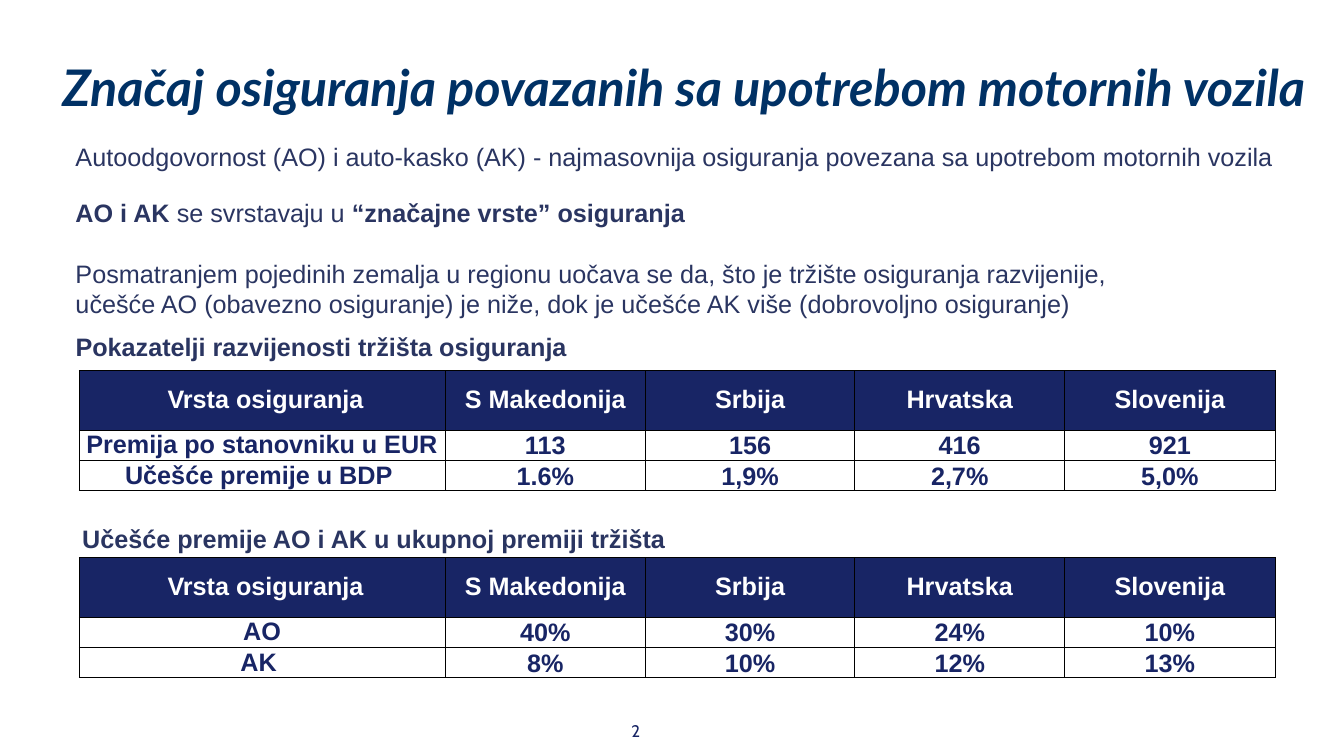
from lxml import etree
from pptx import Presentation
from pptx.dml.color import RGBColor
from pptx.enum.text import MSO_ANCHOR as Anchor, MSO_AUTO_SIZE as AutoSize, PP_ALIGN as Align
from pptx.oxml import parse_xml
from pptx.util import Inches, Pt

COLORS = {"navy": "182565", "title": "003165", "body": "2A3561", "white": "FFFFFF", "border": "000000"}
NAMESPACE = "http://schemas.openxmlformats.org/drawingml/2006/main"

presentation = Presentation()
presentation.slide_width = Inches(26.67)
presentation.slide_height = Inches(15)
slide = presentation.slides.add_slide(presentation.slide_layouts[6])


def write(paragraph, text, size=36, font="Arial", color="body", bold=False, italic=False, align=Align.JUSTIFY):
    paragraph.alignment = align
    run = paragraph.add_run()
    run.text = text
    run.font.size = Pt(size)
    run.font.name = font
    run.font.bold = bold
    run.font.italic = italic
    run.font.color.rgb = RGBColor.from_string(COLORS[color])


def add_box(left, top, width, height, inset=None, wrap=True, anchor=Anchor.TOP):
    shape = slide.shapes.add_textbox(Inches(left), Inches(top), Inches(width), Inches(height))
    frame = shape.text_frame
    frame.word_wrap = wrap
    frame.auto_size = AutoSize.SHAPE_TO_FIT_TEXT
    frame.vertical_anchor = anchor
    if inset is not None:
        frame.margin_left = frame.margin_right = frame.margin_top = frame.margin_bottom = Inches(inset)
    return frame


number = add_box(12.36, 14.23, 0.51, 0.52, inset=0.06, wrap=False)
write(number.paragraphs[0], "2", size=24, font="Cabin", color="navy", align=Align.CENTER)

title = add_box(1.18, 0.82, 24.92, 2.92, inset=0.06).paragraphs[0]
title.line_spacing = 1.2
write(title, "Značaj osiguranja povazanih sa upotrebom motornih vozila",
      size=72, font="Lato", color="title", bold=True, italic=True, align=Align.LEFT)

intro = add_box(1.4, 2.75, 24.07, 0.71)
write(intro.paragraphs[0], "Autoodgovornost (AO) i auto-kasko (AK) - najmasovnija osiguranja "
      "povezana sa upotrebom motornih vozila")

explanation = add_box(1.4, 3.87, 24.07, 2.52)
paragraph = explanation.paragraphs[0]
write(paragraph, "AO i AK ", bold=True)
write(paragraph, "se svrstavaju u ")
write(paragraph, "“značajne vrste” osiguranja", bold=True)
paragraph = explanation.add_paragraph()
paragraph.space_before = Pt(43)
write(paragraph, "Posmatranjem pojedinih zemalja u regionu uočava se da, što je tržište osiguranja razvijenije,")
write(explanation.add_paragraph(),
      "učešće AO (obavezno osiguranje) je niže, dok je učešće AK više (dobrovoljno osiguranje)")

indicators = add_box(1.4, 6.52, 13.11, 0.71)
write(indicators.paragraphs[0], "Pokazatelji razvijenosti tržišta osiguranja", bold=True)

shares = add_box(1.57, 10.33, 17.22, 0.72, inset=0.06, anchor=Anchor.MIDDLE)
write(shares.paragraphs[0], "Učešće premije AO i AK u ukupnoj premiji tržišta", bold=True, align=Align.LEFT)

header = [" Vrsta osiguranja", "S Makedonija", "Srbija", "Hrvatska", "Slovenija"]
column_widths = [7.26, 3.98, 4.15, 4.17, 4.17]
row_heights = [1.18, 0.59, 0.59]
tables = [
    (7.35, [["Premija po stanovniku u EUR", "113", "156", "416", "921"],
            ["Učešće premije u BDP ", "1.6%", "1,9%", "2,7%", "5,0%"]]),
    (11.06, [["AO", "40%", "30%", "24%", "10%"],
             ["AK ", "8%", "10%", "12%", "13%"]]),
]

for top, rows in tables:
    table = slide.shapes.add_table(3, 5, Inches(1.57), Inches(top),
                                   Inches(sum(column_widths)), Inches(sum(row_heights))).table
    table.first_row = False
    table.horz_banding = False
    for column, width in zip(table.columns, column_widths):
        column.width = Inches(width)
    for row, height in zip(table.rows, row_heights):
        row.height = Inches(height)
    for row_index, values in enumerate([header] + rows):
        for column_index, value in enumerate(values):
            cell = table.cell(row_index, column_index)
            is_header = row_index == 0
            cell.margin_left = cell.margin_right = cell.margin_top = cell.margin_bottom = 0
            cell.vertical_anchor = Anchor.MIDDLE if is_header or column_index == 0 else Anchor.BOTTOM
            if is_header:
                cell.fill.solid()
                cell.fill.fore_color.rgb = RGBColor.from_string(COLORS["navy"])
            else:
                cell.fill.background()
            write(cell.text_frame.paragraphs[0], value, color="white" if is_header else "navy",
                  bold=True, align=Align.CENTER)
            properties = cell._tc.get_or_add_tcPr()
            for position, side in enumerate(["lnL", "lnR", "lnT", "lnB"]):
                border = parse_xml(f'<a:{side} xmlns:a="{NAMESPACE}" w="{Pt(1)}"/>')
                fill = etree.SubElement(border, f"{{{NAMESPACE}}}solidFill")
                etree.SubElement(fill, f"{{{NAMESPACE}}}srgbClr", val=COLORS["border"])
                properties.insert(position, border)

presentation.save("out.pptx")
